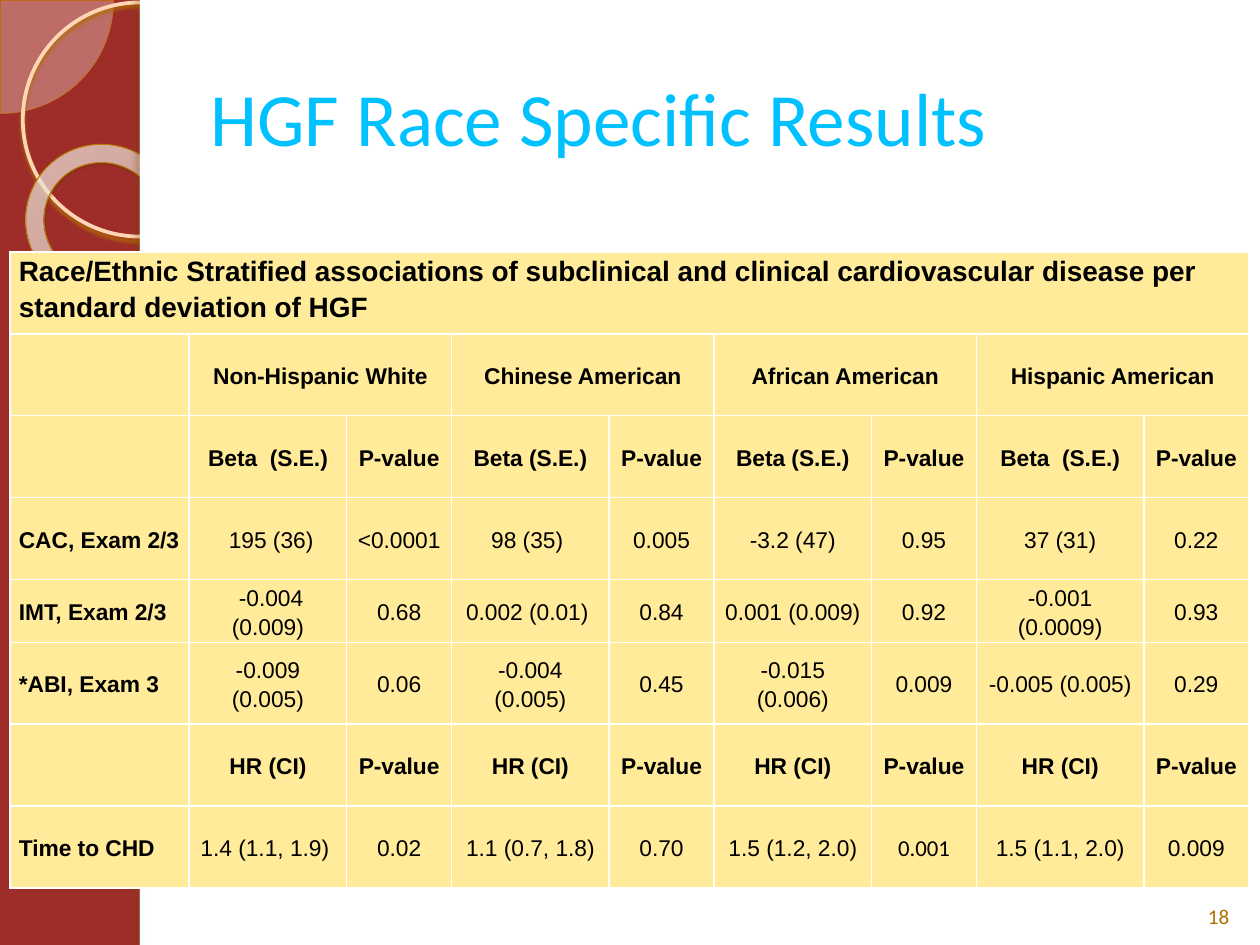
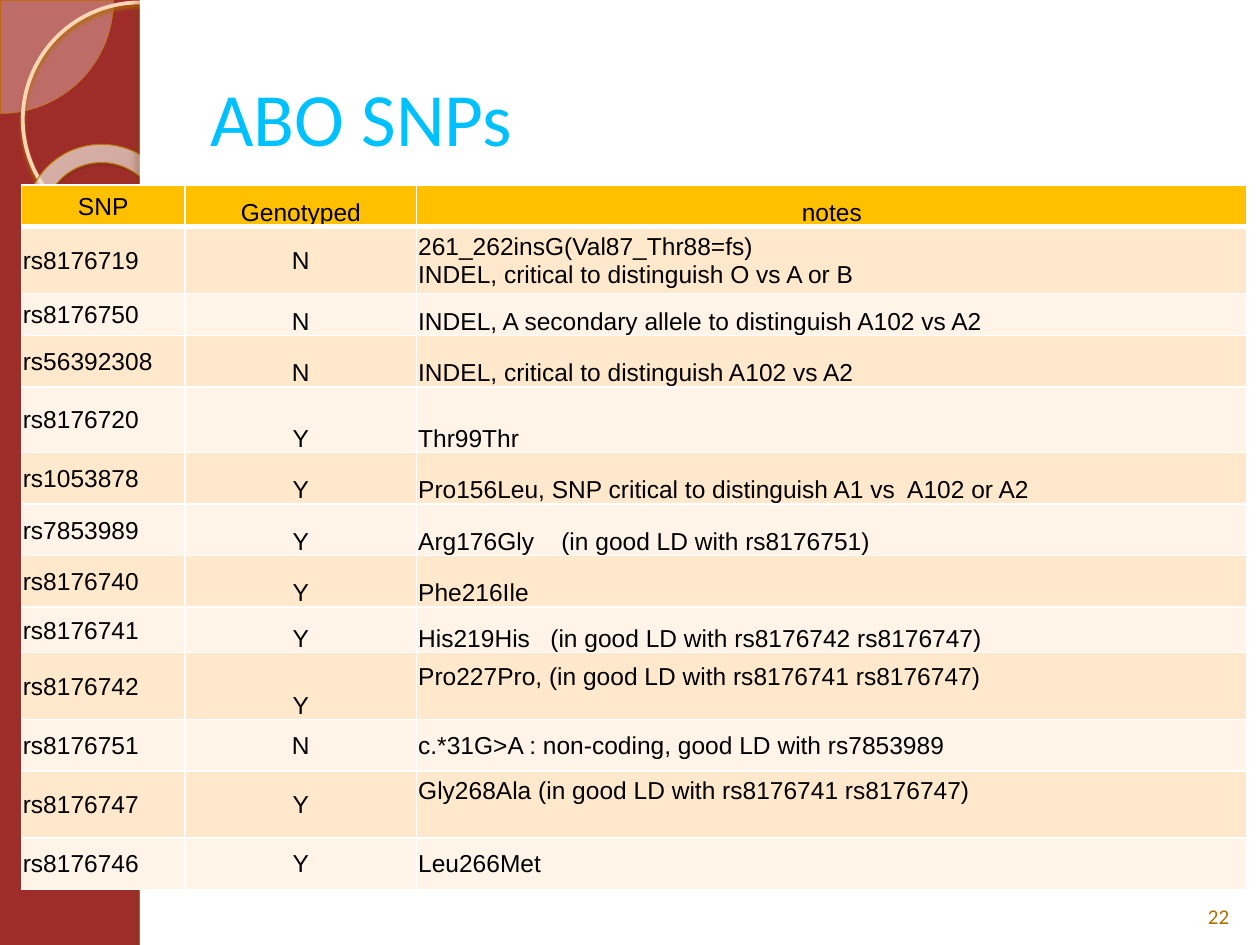
from lxml.etree import SubElement as Sub
from pptx import Presentation
from pptx.dml.color import RGBColor
from pptx.enum.shapes import MSO_SHAPE as Kind
from pptx.enum.text import MSO_ANCHOR as Anchor, PP_ALIGN as Align
from pptx.oxml import parse_xml as to_xml
from pptx.oxml.ns import nsdecls, qn
from pptx.util import Cm, Pt

RED, WHITE, BLACK = "9E2D2A", "FFFFFF", "000000"
SKY, BROWN = "00C1FF", "AD6F00"
CREAM, GOLD = "FFEB99", "FFC000"
BANDS = ["FFE8CC", "FFF4E7"]
HEAD, BODY = "Calibri", "Arial"
MID, LOW = Anchor.MIDDLE, Anchor.BOTTOM

# Slide 18: first column and fully bold rows are labels
RACES = ["Non-Hispanic White", "Chinese American",
         "African American", "Hispanic American"]
CLAIM = ("Race/Ethnic Stratified associations of subclinical and clinical "
         "cardiovascular disease per standard deviation of HGF")
HGF = [
    [CLAIM] + [""] * 8,
    [""] + [text for race in RACES for text in (race, "")],
    ["", "Beta  (S.E.)", "P-value", "Beta (S.E.)", "P-value",
     "Beta (S.E.)", "P-value", "Beta  (S.E.)", "P-value"],
    ["CAC, Exam 2/3", " 195 (36)", "<0.0001", "98 (35) ", "0.005",
     "-3.2 (47)", "0.95", "37 (31)", "0.22"],
    ["IMT, Exam 2/3", " -0.004 (0.009)", "0.68", "0.002 (0.01) ", "0.84",
     "0.001 (0.009)", "0.92", "-0.001 (0.0009)", "0.93"],
    ["*ABI, Exam 3", "-0.009 (0.005)", "0.06", "-0.004 (0.005)", "0.45",
     "-0.015 (0.006)", "0.009", "-0.005 (0.005)", "0.29"],
    [""] + ["HR (CI)", "P-value"] * 4,
    ["Time to CHD", "1.4 (1.1, 1.9) ", "0.02", "1.1 (0.7, 1.8)", "0.70",
     "1.5 (1.2, 2.0)", "0.001", "1.5 (1.1, 2.0)", "0.009"],
]
HGF_COLS = [3.61, 3.18, 2.11, 3.18, 2.11, 3.18, 2.11, 3.38, 2.11]
HGF_ROWS = [1.65] * 4 + [0.89] + [1.65] * 3
ODD = (7, 6)  # the one value set in the heading font

# Slide 22: row height, anchor of the last two columns, cells
SNPS = [
    (0.84, LOW, "SNP", "Genotyped", "notes"),
    (1.35, MID, "rs8176719", "N",
     "261_262insG(Val87_Thr88=fs)\nINDEL, critical to distinguish O vs A or B"),
    (0.84, LOW, "rs8176750", "N",
     "INDEL, A secondary allele to distinguish A102 vs A2"),
    (1.04, LOW, "rs56392308", "N", "INDEL, critical to distinguish A102 vs A2"),
    (1.32, LOW, "rs8176720", "Y", "Thr99Thr"),
    (1.04, LOW, "rs1053878", "Y",
     "Pro156Leu, SNP critical to distinguish A1 vs  A102 or A2"),
    (1.04, LOW, "rs7853989", "Y", "Arg176Gly    (in good LD with rs8176751)"),
    (1.04, LOW, "rs8176740", "Y", "Phe216Ile"),
    (0.91, LOW, "rs8176741", "Y",
     "His219His   (in good LD with rs8176742 rs8176747)"),
    (1.35, LOW, "rs8176742", "Y",
     "Pro227Pro, (in good LD with rs8176741 rs8176747)"),
    (1.04, MID, "rs8176751", "N",
     "c.*31G>A : non-coding, good LD with rs7853989"),
    (1.35, MID, "rs8176747", "Y",
     "Gly268Ala (in good LD with rs8176741 rs8176747)"),
    (1.04, MID, "rs8176746", "Y", "Leu266Met"),
]
SNP_COLS = [3.3, 4.67, 16.74]
RAISED = {"rs8176742", "rs8176747"}  # notes that sit one line higher

RING = [(0, "FFF5EE", 70), (70, "FFFAF6", 55), (100, "CE8400", 60)]


def rgb(code):
    return RGBColor.from_string(code)


def paint(fill, code):
    fill.solid()
    fill.fore_color.rgb = rgb(code)


def write(frame, text, size, color, face, bold=False, align=Align.LEFT, gap=None):
    """Fill a text frame, one paragraph for each line of the text."""
    for i, line in enumerate(text.split("\n")):
        para = frame.add_paragraph() if i else frame.paragraphs[0]
        para.alignment, para.line_spacing = align, gap
        run = para.add_run()
        run.text = line
        font = run.font
        font.size, font.name, font.bold = Pt(size), face, bold
        font.color.rgb = rgb(color)


def add_part(slide, kind, box, fill=None, line=None, shade=None):
    """line is (colour, points); shade is (colour, alpha, blur, distance, angle)."""
    part = slide.shapes.add_shape(kind, *map(Cm, box))
    part.shadow.inherit = False
    if fill:
        paint(part.fill, fill)
    else:
        part.fill.background()
    if line:
        paint(part.line.fill, line[0])
        part.line.width = Pt(line[1])
    else:
        part.line.fill.background()
    if shade:
        code, alpha, blur, dist, angle = shade
        part.element.spPr.find(qn("a:effectLst")).append(to_xml(
            f'<a:outerShdw {nsdecls("a")} blurRad="{Pt(blur)}" dist="{Pt(dist)}" '
            f'dir="{angle * 60000}" algn="tl" rotWithShape="0"><a:srgbClr val="{code}">'
            f'<a:alpha val="{alpha * 1000}"/></a:srgbClr></a:outerShdw>'))
    return part


def add_decor(slide, layout):
    """Draw the side band and white page, then hand them to the layout."""
    paint(layout.background.fill, RED)
    pie = add_part(slide, Kind.PIE, (-2.26, -2.26, 4.55, 4.55),
                   "FFEFE4", ("C88000", 0.25))
    pie.adjustments[0], pie.adjustments[1] = 0, 54.02
    tint = pie.element.spPr.find(qn("a:solidFill")).find(qn("a:srgbClr"))
    Sub(tint, qn("a:alpha"), val="33000")
    loop = add_part(slide, Kind.OVAL, (0.46, 0.05, 4.72, 4.72), None,
                    ("FFD5B6", 2.15), (BROWN, 85, 2, 2, 90))
    ring = add_part(slide, Kind.DONUT, (0.51, 2.92, 3.12, 3.07), None,
                    ("BB7800", 0.58), ("563700", 35, 1, 1.2, 75))
    ring.adjustments[0], ring.rotation = 0.12, 38.6
    stops = "".join(
        f'<a:gs pos="{at * 1000}"><a:srgbClr val="{code}">'
        f'<a:alpha val="{alpha * 1000}"/></a:srgbClr></a:gs>'
        for at, code, alpha in RING)
    props = ring.element.spPr
    props.replace(props.find(qn("a:noFill")), to_xml(
        f'<a:gradFill {nsdecls("a")}><a:gsLst>{stops}</a:gsLst><a:path path="circle">'
        '<a:fillToRect l="-408000" t="-50000" r="508000" b="150000"/>'
        '</a:path></a:gradFill>'))
    page = add_part(slide, Kind.RECTANGLE, (2.82, 0, 22.58, 19.05), WHITE)
    edge = add_part(slide, Kind.RECTANGLE, (2.82, 0, 0.2, 19.05), WHITE,
                    None, ("724A02", 25, 3, 3, 180))
    for num, part in enumerate((pie, loop, ring, page, edge), 20):
        part.element.nvSpPr.cNvPr.set("id", str(num))
        layout.shapes.element.append(part.element)


def add_page(deck, title, number):
    slide = deck.slides.add_slide(deck.slide_layouts[5])
    head = slide.shapes.title
    head.left, head.top, head.width, head.height = map(Cm, (3.99, 0.76, 20.83, 3.18))
    head.text_frame.vertical_anchor = MID
    write(head.text_frame, title, 43, SKY, HEAD)
    note = slide.shapes.add_textbox(*map(Cm, (23.93, 17.53, 1.27, 1.32)))
    note.text_frame.word_wrap = True
    note.text_frame.vertical_anchor = LOW
    write(note.text_frame, number, 12, BROWN, HEAD, align=Align.CENTER)
    return slide


def add_grid(slide, left, top, cols, rows):
    frame = slide.shapes.add_table(len(rows), len(cols), Cm(left), Cm(top),
                                   Cm(sum(cols)), Cm(sum(rows)))
    grid = frame.table
    grid.first_row = grid.horz_banding = False
    for col, width in zip(grid.columns, cols):
        col.width = Cm(width)
    for row, height in zip(grid.rows, rows):
        row.height = Cm(height)
    return grid


def dress(cell, fill, pads, base=1):
    """Set borders, fill and margins; base is the width of the bottom border."""
    props = cell._tc.get_or_add_tcPr()
    for side, width in zip("LRTB", (1, 1, 1, base)):
        line = Sub(props, qn(f"a:ln{side}"), w=str(Pt(width)))
        Sub(Sub(line, qn("a:solidFill")), qn("a:srgbClr"), val=WHITE)
    paint(cell.fill, fill)
    (cell.margin_left, cell.margin_top,
     cell.margin_right, cell.margin_bottom) = map(Cm, pads)


def fill_hgf(slide):
    grid = add_grid(slide, 0.2, 5.08, HGF_COLS, HGF_ROWS)
    for r, row in enumerate(HGF):
        for c, text in enumerate(row):
            cell = grid.cell(r, c)
            dress(cell, CREAM, (0.18, 0, 0.18, 0))
            if not text:
                continue
            cell.vertical_anchor = MID if r else Anchor.TOP
            write(cell.text_frame, text, 13 if r else 16, BLACK,
                  HEAD if (r, c) == ODD else BODY,
                  c == 0 or not row[0], Align.CENTER if c else Align.LEFT, 1.15)
    grid.cell(0, 0).merge(grid.cell(0, 8))
    for c in range(1, 9, 2):
        grid.cell(1, c).merge(grid.cell(1, c + 1))


def fill_snps(slide):
    grid = add_grid(slide, 0.43, 3.73, SNP_COLS, [row[0] for row in SNPS])
    for r, (_, anchor, *texts) in enumerate(SNPS):
        for c, text in enumerate(texts):
            cell = grid.cell(r, c)
            lift = 0.57 if c == 2 and texts[0] in RAISED else 0
            dress(cell, BANDS[(r - 1) % 2] if r else GOLD,
                  (0.03, 0.03, 0.03, lift), 1 if r else 3)
            cell.vertical_anchor = anchor if c else MID
            write(cell.text_frame, text, 14, BLACK, BODY,
                  align=Align.CENTER if c == 1 or r == 0 else Align.LEFT)


def main():
    deck = Presentation()
    deck.slide_width, deck.slide_height = Cm(25.4), Cm(19.05)
    first = add_page(deck, "HGF Race Specific Results", "18")
    add_decor(first, first.slide_layout)
    fill_hgf(first)
    fill_snps(add_page(deck, "ABO SNPs", "22"))
    deck.save("out.pptx")


if __name__ == "__main__":
    main()
